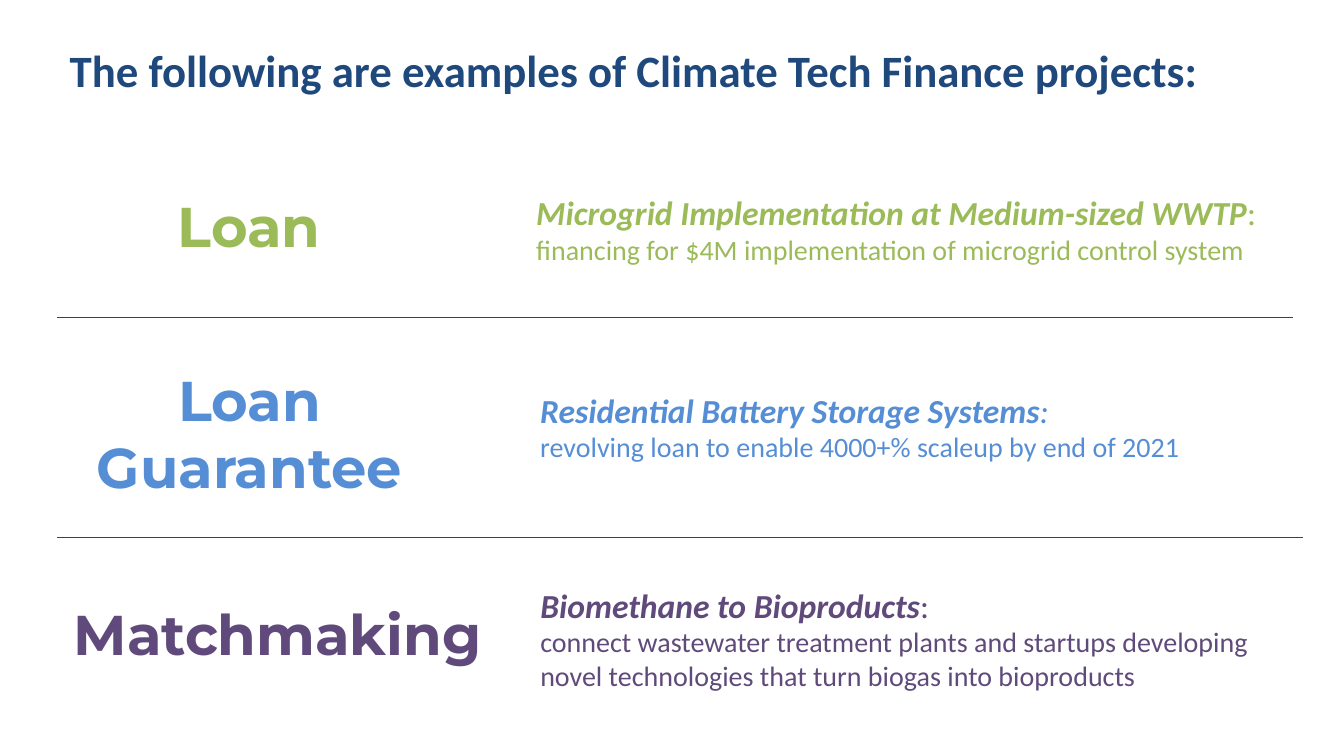
from dataclasses import dataclass

from lxml.etree import SubElement
from pptx import Presentation
from pptx.dml.color import RGBColor
from pptx.enum.shapes import MSO_CONNECTOR
from pptx.enum.text import MSO_ANCHOR, MSO_AUTO_SIZE, PP_ALIGN
from pptx.oxml.ns import qn
from pptx.slide import Slide
from pptx.text.text import TextFrame, _Paragraph
from pptx.util import Inches, Pt

NAVY = RGBColor(0x1F, 0x49, 0x7D)
GREEN = RGBColor(0x9B, 0xBB, 0x59)
BLUE = RGBColor(0x55, 0x8E, 0xD5)
PURPLE = RGBColor(0x60, 0x4A, 0x7B)

Box = tuple[float, float, float, float]


@dataclass(frozen=True)
class Project:
    kind: list[str]
    kind_box: Box
    name: str
    detail: str
    detail_box: Box
    color: RGBColor
    anchor: MSO_ANCHOR = MSO_ANCHOR.MIDDLE
    colon_italic: bool = False


@dataclass(frozen=True)
class Divider:
    y: float
    right: float
    left: float = 0.57


PROJECTS = [
    Project(["Loan"], (0.57, 1.85, 3.8, 0.77),
            "Microgrid Implementation at Medium-sized WWTP",
            "financing for $4M implementation of microgrid control system",
            (5.22, 1.78, 7.51, 0.99), GREEN),
    Project(["Loan", "Guarantee"], (0.59, 3.58, 3.77, 1.45),
            "Residential Battery Storage Systems",
            "revolving loan to enable 4000+% scaleup by end of 2021",
            (5.26, 3.71, 6.74, 1.04), BLUE, colon_italic=True),
    Project(["Matchmaking"], (0.59, 5.9, 4.33, 0.77),
            "Biomethane to Bioproducts",
            "connect wastewater treatment plants and startups developing "
            "novel technologies that turn biogas into bioproducts",
            (5.26, 5.75, 7.51, 1.06), PURPLE, MSO_ANCHOR.TOP),
]
DIVIDERS = [Divider(3.15, 12.82), Divider(5.33, 12.92)]


def add_text(p: _Paragraph, text: str, *, size: float, color: RGBColor,
             font: str = "Calibri", bold: bool = False, italic: bool = False,
             align: PP_ALIGN = PP_ALIGN.LEFT) -> None:
    p.alignment = align
    r = p.add_run()
    r.text = text
    r.font.name = font
    r.font.size = Pt(size)
    r.font.bold = bold
    r.font.italic = italic
    r.font.color.rgb = color


def add_box(s: Slide, box: Box, anchor: MSO_ANCHOR = MSO_ANCHOR.TOP) -> TextFrame:
    tf = s.shapes.add_textbox(*map(Inches, box)).text_frame
    tf.word_wrap = True
    tf.vertical_anchor = anchor
    return tf


def add_title(s: Slide, text: str) -> None:
    sp = s.shapes.title
    sp.left, sp.top, sp.width, sp.height = map(Inches, (0.59, 0.37, 11.5, 0.64))
    tf = sp.text_frame
    tf.auto_size = MSO_AUTO_SIZE.NONE
    tf.word_wrap = False
    tf.vertical_anchor = MSO_ANCHOR.TOP
    add_text(tf.paragraphs[0], text, size=32, color=NAVY, bold=True)


def add_project(s: Slide, project: Project) -> None:
    tf = add_box(s, project.kind_box)
    for i, line in enumerate(project.kind):
        p = tf.add_paragraph() if i else tf.paragraphs[0]
        add_text(p, line, size=40, color=project.color, font="Montserrat",
                 bold=True, align=PP_ALIGN.CENTER)

    tf = add_box(s, project.detail_box, project.anchor)
    p = tf.paragraphs[0]
    add_text(p, project.name, size=24, color=project.color, bold=True, italic=True)
    add_text(p, ":", size=24, color=project.color, italic=project.colon_italic)
    add_text(tf.add_paragraph(), project.detail, size=20, color=project.color)


def add_divider(s: Slide, divider: Divider) -> None:
    y = Inches(divider.y)
    line = s.shapes.add_connector(MSO_CONNECTOR.STRAIGHT, Inches(divider.left), y,
                                  Inches(divider.right), y)
    line.line.color.rgb = NAVY
    line.line.width = Pt(0.5)
    SubElement(line._element.spPr, qn("a:effectLst"))


def main() -> None:
    prs = Presentation()
    prs.slide_width, prs.slide_height = Inches(13.33), Inches(7.5)
    s = prs.slides.add_slide(prs.slide_layouts[5])
    add_title(s, "The following are examples of Climate Tech Finance projects:")
    for project in PROJECTS:
        add_project(s, project)
    for divider in DIVIDERS:
        add_divider(s, divider)
    prs.save("out.pptx")


if __name__ == "__main__":
    main()
